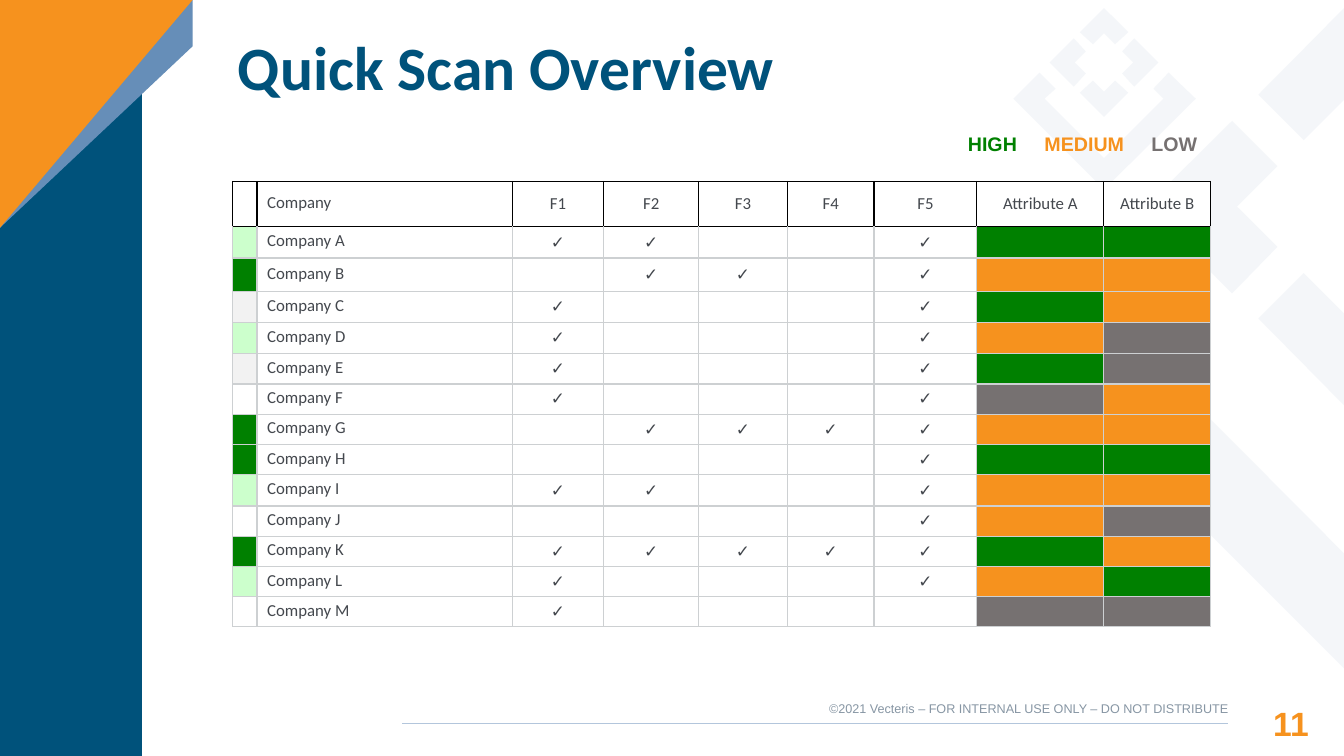
import pptx
import pptx.util
import pptx.dml.color
import pptx.enum.text
import pptx.enum.shapes
import pptx.oxml.ns
from lxml import etree

Inches, Pt = pptx.util.Inches, pptx.util.Pt
RGBColor = pptx.dml.color.RGBColor
PP_ALIGN = pptx.enum.text.PP_ALIGN
MIDDLE = pptx.enum.text.MSO_ANCHOR.MIDDLE
qn = pptx.oxml.ns.qn

NAVY = RGBColor(0x00, 0x52, 0x7B)
BLUE = RGBColor(0x66, 0x8E, 0xB8)
ORANGE = RGBColor(0xF6, 0x92, 0x1E)
GREEN = RGBColor(0x00, 0x80, 0x00)
MINT = RGBColor(0xCC, 0xFF, 0xCC)
GRAY = RGBColor(0x76, 0x71, 0x71)
PALE_GRAY = RGBColor(0xF2, 0xF2, 0xF2)
WHITE = RGBColor(0xFF, 0xFF, 0xFF)
BLACK = RGBColor(0x00, 0x00, 0x00)
TEXT = RGBColor(0x44, 0x48, 0x4E)
GRID = RGBColor(0xCD, 0xD0, 0xD2)
MOTIF = RGBColor(0xE9, 0xEE, 0xF4)
FOOTER = RGBColor(0x87, 0x96, 0xA4)
RULE = RGBColor(0xB3, 0xC6, 0xDC)

HEADERS = ["", "Company", "F1", "F2", "F3", "F4", "F5", "Attribute A", "Attribute B"]
COL_WIDTHS = [0.23, 2.53, 0.91, 0.94, 0.88, 0.86, 1.02, 1.26, 1.06]
ROW_HEIGHTS = [0.45, 0.31, 0.33, 0.31, 0.31] + [0.3] * 4 + [0.31] + [0.3] * 4
COMPANIES = [
    ("A", MINT, {1, 2, 5}, GREEN, GREEN),
    ("B", GREEN, {2, 3, 5}, ORANGE, ORANGE),
    ("C", PALE_GRAY, {1, 5}, GREEN, ORANGE),
    ("D", MINT, {1, 5}, ORANGE, GRAY),
    ("E", PALE_GRAY, {1, 5}, GREEN, GRAY),
    ("F", WHITE, {1, 5}, GRAY, ORANGE),
    ("G", GREEN, {2, 3, 4, 5}, ORANGE, ORANGE),
    ("H", GREEN, {5}, GREEN, GREEN),
    ("I", MINT, {1, 2, 5}, ORANGE, ORANGE),
    ("J", WHITE, {5}, ORANGE, GRAY),
    ("K", GREEN, {1, 2, 3, 4, 5}, GREEN, ORANGE),
    ("L", MINT, {1, 5}, ORANGE, GREEN),
    ("M", WHITE, {1}, GRAY, GRAY),
]


def set_attrs(obj, **values):
    for name, value in values.items():
        setattr(obj, name, value)


def add_run(p, text, size, color, font="Arial", bold=False):
    r = p.add_run()
    r.text = text
    set_attrs(r.font, name=font, size=Pt(size), bold=bold)
    r.font.color.rgb = color


def add_polygon(slide, points, color, alpha=None):
    pts = [(Inches(x), Inches(y)) for x, y in points]
    builder = slide.shapes.build_freeform(*pts[0], scale=1.0)
    builder.add_line_segments(pts[1:], close=True)
    sp = builder.convert_to_shape()
    sp.shadow.inherit = False
    sp.fill.solid()
    sp.fill.fore_color.rgb = color
    sp.line.fill.background()
    if alpha is not None:
        clr = sp._element.spPr.find(qn("a:solidFill"))[0]
        etree.SubElement(clr, qn("a:alpha"), val=str(alpha * 1000))


def add_motif(slide):
    corner = [(13.33, 0.08), (12.48, 0.94), (12.93, 1.39), (13.33, 0.99)]
    polygons = [
        [(12.22, 1.2), (11.36, 2.05), (12.22, 2.91), (12.67, 2.45), (12.27, 2.05), (12.67, 1.65)],
        [(11, 2.4), (10.05, 3.35), (13.33, 6.63), (13.33, 5.49), (11.2, 3.35), (11.57, 2.97)],
        corner,
        [(x, 4.1 - y) for x, y in corner],
        [(10.31, 0.72), (10.05, 0.98), (10.95, 1.88), (11.86, 0.98), (11.59, 0.72),
         (11.44, 0.88), (11.54, 0.98), (10.95, 1.57), (10.36, 0.98), (10.47, 0.88)],
    ]
    chevron = [(0, -0.54), (-0.24, -0.3), (-0.11, -0.18), (0, -0.29), (0.11, -0.18), (0.24, -0.3)]
    for _ in range(4):
        polygons.append([(10.95 + x, 0.62 + y) for x, y in chevron])
        chevron = [(-y, x) for x, y in chevron]
    for points in polygons:
        add_polygon(slide, points, MOTIF, alpha=49)


def add_side_band(slide):
    add_polygon(slide, [(0, 0), (1.41, 0), (1.41, 7.5), (0, 7.5)], NAVY)
    add_polygon(slide, [(1.91, 0), (0, 0), (0, 2.26), (1.91, 0.46)], BLUE)
    add_polygon(slide, [(1.91, 0), (0, 0), (0, 2.26)], ORANGE)


def add_text(slide, box, align=PP_ALIGN.LEFT):
    sp = slide.shapes.add_textbox(*map(Inches, box))
    tf = sp.text_frame
    set_attrs(tf, word_wrap=True, margin_left=0, margin_right=0, margin_top=0, margin_bottom=0)
    p = tf.paragraphs[0]
    p.alignment = align
    return p


def add_legend(slide):
    p = add_text(slide, (9.6, 1.31, 2.5, 0.24))
    tabs = etree.SubElement(p._p.get_or_add_pPr(), qn("a:tabLst"))
    for pos in (0.76, 1.82):
        etree.SubElement(tabs, qn("a:tab"), pos=str(Inches(pos)), algn="l")
    for text, color in (("HIGH\t", GREEN), ("MEDIUM\t", ORANGE), ("LOW", GRAY)):
        add_run(p, text, 14, color, bold=True)


def set_borders(cell, color, top):
    tcPr = cell._tc.get_or_add_tcPr()
    sides = (("lnL", color), ("lnR", color), ("lnT", top), ("lnB", color))
    for i, (side, rgb) in enumerate(sides):
        ln = etree.Element(qn(f"a:{side}"), w=str(Pt(1)))
        fill = etree.SubElement(ln, qn("a:solidFill"))
        etree.SubElement(fill, qn("a:srgbClr"), val=str(rgb))
        tcPr.insert(i, ln)


def format_cell(cell, text, fill, row, col):
    set_attrs(cell, vertical_anchor=MIDDLE, margin_top=Inches(0.03), margin_bottom=Inches(0.03))
    cell.fill.solid()
    cell.fill.fore_color.rgb = fill
    p = cell.text_frame.paragraphs[0]
    if col == 1:
        p.line_spacing = Pt(13)
    else:
        p.alignment = PP_ALIGN.CENTER
    if text:
        add_run(p, text, 12, TEXT, "Calibri", bold=text == "✓")
    else:
        etree.SubElement(p._p, qn("a:endParaRPr"), sz="1200")
    set_borders(cell, GRID if row else BLACK, GRID if row > 1 else BLACK)


def add_scan_table(slide):
    rows = [[(text, WHITE) for text in HEADERS]]
    for letter, status, checks, attr_a, attr_b in COMPANIES:
        marks = [("✓" if f in checks else "", WHITE) for f in range(1, 6)]
        rows.append([("", status), (f"Company {letter}", WHITE), *marks, ("", attr_a), ("", attr_b)])
    table = slide.shapes.add_table(len(rows), len(HEADERS), Inches(2.31), Inches(1.8),
                                   Inches(sum(COL_WIDTHS)), Inches(sum(ROW_HEIGHTS))).table
    set_attrs(table, first_row=False, horz_banding=False)
    for column, width in zip(table.columns, COL_WIDTHS):
        column.width = Inches(width)
    for i, (height, cells) in enumerate(zip(ROW_HEIGHTS, rows)):
        table.rows[i].height = Inches(height)
        for j, (text, fill) in enumerate(cells):
            format_cell(table.cell(i, j), text, fill, i, j)


def add_footer(slide):
    line = slide.shapes.add_connector(pptx.enum.shapes.MSO_CONNECTOR.STRAIGHT,
                                      Inches(3.99), Inches(7.18), Inches(12.18), Inches(7.18))
    line.line.color.rgb = RULE
    line.line.width = Pt(0.82)
    etree.SubElement(line._element.spPr, qn("a:effectLst"))
    p = add_text(slide, (12.18, 6.9, 0.8, 0.38), PP_ALIGN.RIGHT)
    p.line_spacing = 1.19
    add_run(p, "11", 24, ORANGE, bold=True)
    p = add_text(slide, (7.92, 6.95, 4.26, 0.15), PP_ALIGN.RIGHT)
    add_run(p, "©2021 Vecteris – FOR INTERNAL USE ONLY – DO NOT DISTRIBUTE", 9, FOOTER)


def add_title(slide):
    sp = slide.shapes.title
    set_attrs(sp, left=Inches(2.36), top=Inches(0.35), width=Inches(9.58), height=Inches(0.68))
    tf = sp.text_frame
    set_attrs(tf, word_wrap=True, vertical_anchor=MIDDLE, margin_left=0, margin_right=0,
              margin_top=Inches(0.01), margin_bottom=0)
    p = tf.paragraphs[0]
    set_attrs(p, alignment=PP_ALIGN.LEFT, line_spacing=0.9)
    add_run(p, "Quick Scan Overview", 44, NAVY, "Calibri", True)
    slide.shapes._spTree.append(sp._element)


def main():
    prs = pptx.Presentation()
    set_attrs(prs, slide_width=Inches(13.33), slide_height=Inches(7.5))
    slide = prs.slides.add_slide(prs.slide_layouts[5])
    add_motif(slide)
    add_side_band(slide)
    add_footer(slide)
    add_scan_table(slide)
    add_legend(slide)
    add_title(slide)
    prs.save("out.pptx")


if __name__ == "__main__":
    main()
